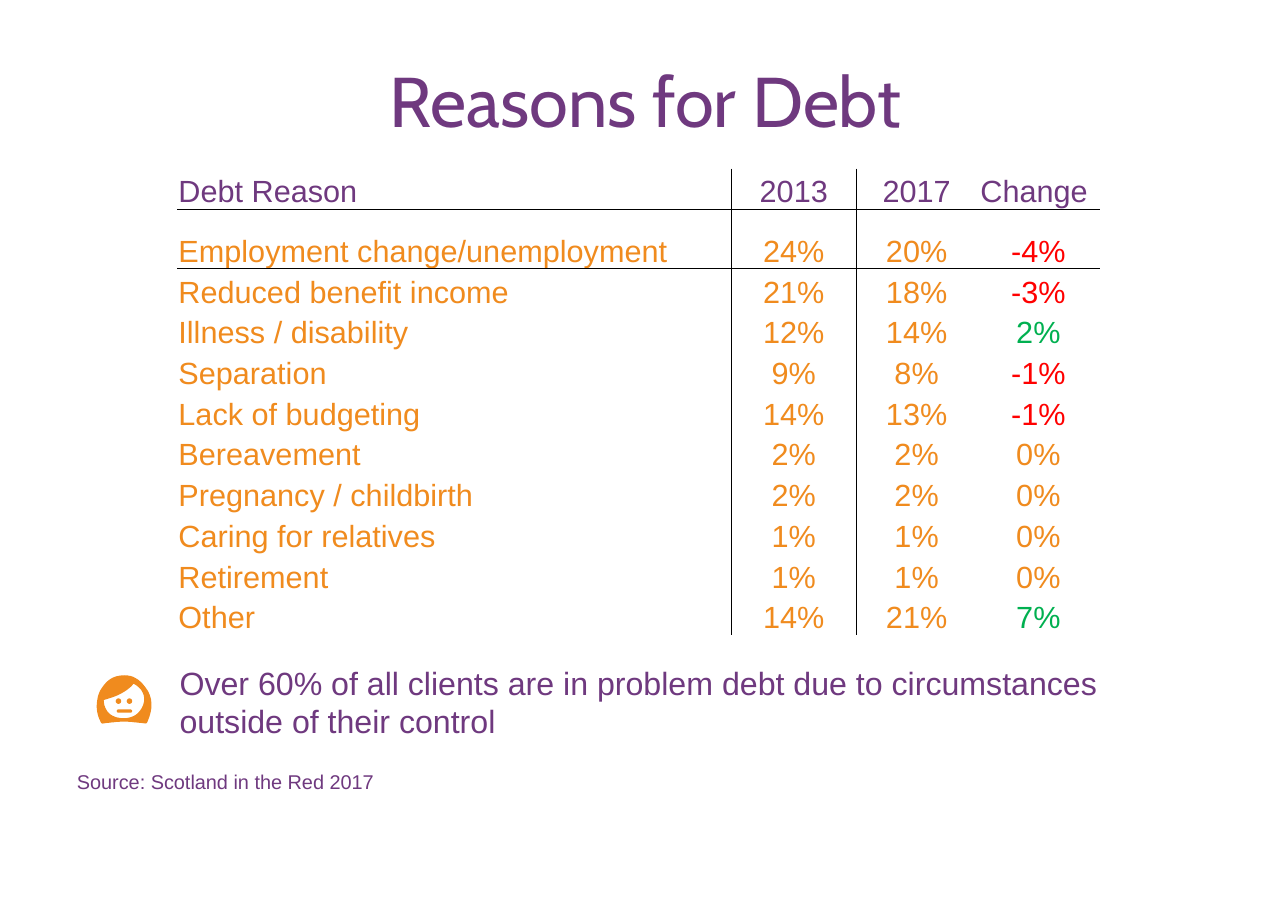
import typing

import lxml.etree
import pptx
import pptx.dml.color
import pptx.enum.shapes
import pptx.enum.text
import pptx.oxml.ns
import pptx.util

Inches = pptx.util.Inches
Align = pptx.enum.text.PP_ALIGN
Anchor = pptx.enum.text.MSO_ANCHOR
AutoSize = pptx.enum.text.MSO_AUTO_SIZE
Shape = pptx.enum.shapes.MSO_SHAPE

PURPLE, ORANGE, RED, GREEN, BLACK = "6F397F", "F08B1E", "FF0000", "00B050", "000000"
NO_STYLE = "{2D5ABB26-0587-4C30-8999-92F81FD0307C}"


class Reason(typing.NamedTuple):
    name: str
    y2013: int
    y2017: int


class Note(typing.NamedTuple):
    text: str
    size: float
    box: tuple[float, float, float, float]
    insets: tuple[float, float, float, float]


class Feature(typing.NamedTuple):
    kind: Shape
    box: tuple[float, float, float, float]


REASONS = [
    Reason("Employment change/unemployment", 24, 20),
    Reason("Reduced benefit income", 21, 18),
    Reason("Illness / disability", 12, 14),
    Reason("Separation", 9, 8),
    Reason("Lack of budgeting", 14, 13),
    Reason("Bereavement", 2, 2),
    Reason("Pregnancy / childbirth", 2, 2),
    Reason("Caring for relatives", 1, 1),
    Reason("Retirement", 1, 1),
    Reason("Other", 14, 21),
]
NOTES = [
    Note("Source: Scotland in the Red 2017", 13,
         (0.6, 6.94, 4.17, 0.32), (0.1, 0.05, 0.1, 0.05)),
    Note("Over 60% of all clients are in problem debt due to circumstances "
         "outside of their control", 21,
         (1.52, 5.96, 9.57, 0.82), (0.11, 0.06, 0.11, 0.06)),
]
FEATURES = [
    Feature(Shape.OVAL, (1.05, 6.34, 0.05, 0.05)),
    Feature(Shape.OVAL, (1.15, 6.34, 0.05, 0.05)),
    Feature(Shape.ROUNDED_RECTANGLE, (1.06, 6.44, 0.14, 0.03)),
]
# Bezier contours in thousandths of an inch: start, then two controls and an end per curve
HAIR = [(1321, 6240), (1270, 6170), (1210, 6130), (1130, 6130),
        (1070, 6130), (1010, 6150), (970, 6190), (930, 6230), (905, 6270), (890, 6320),
        (870, 6400), (875, 6470), (910, 6545), (917, 6565), (925, 6570), (940, 6567),
        (1000, 6560), (1060, 6552), (1128, 6550), (1190, 6552), (1250, 6560), (1315, 6567),
        (1330, 6570), (1336, 6562), (1342, 6545), (1390, 6430), (1390, 6330), (1321, 6240)]
FACE = [(1128, 6520), (1080, 6520), (1030, 6510), (990, 6475),
        (960, 6445), (942, 6400), (942, 6355), (960, 6350), (975, 6345), (990, 6340),
        (1050, 6325), (1120, 6290), (1170, 6250), (1190, 6235), (1200, 6222), (1212, 6206),
        (1290, 6245), (1330, 6320), (1300, 6400), (1270, 6480), (1205, 6520), (1128, 6520)]


def rgb(color: str) -> pptx.dml.color.RGBColor:
    return pptx.dml.color.RGBColor.from_string(color)


def add_run(p, text: str, size: float, color: str, font: str = "Arial") -> None:
    r = p.add_run()
    r.text = text
    r.font.name, r.font.size = font, pptx.util.Pt(size)
    r.font.color.rgb = rgb(color)


def set_insets(tf, insets: tuple[float, float, float, float]) -> None:
    tf.margin_left, tf.margin_top, tf.margin_right, tf.margin_bottom = map(Inches, insets)


def add_note(s, note: Note) -> None:
    tf = s.shapes.add_textbox(*map(Inches, note.box)).text_frame
    tf.word_wrap = True
    tf.auto_size = AutoSize.SHAPE_TO_FIT_TEXT
    set_insets(tf, note.insets)
    add_run(tf.paragraphs[0], note.text, note.size, PURPLE)


def set_borders(cell, sides: str) -> None:
    tcPr = cell._tc.get_or_add_tcPr()
    for i, side in enumerate(sides):
        ln = lxml.etree.Element(pptx.oxml.ns.qn(f"a:ln{side}"), w=str(pptx.util.Pt(0.5)))
        fill = lxml.etree.SubElement(ln, pptx.oxml.ns.qn("a:solidFill"))
        lxml.etree.SubElement(fill, pptx.oxml.ns.qn("a:srgbClr"), val=BLACK)
        tcPr.insert(i, ln)


def fill_cell(table, row: int, col: int, text: str, color: str) -> None:
    cell = table.cell(row, col)
    cell.vertical_anchor = Anchor.BOTTOM
    set_insets(cell, (0.01, 0.01, 0.01, 0))
    cell.fill.background()
    p = cell.text_frame.paragraphs[0]
    p.alignment = Align.CENTER if col else Align.LEFT
    add_run(p, text, 20, color)
    set_borders(cell, {0: "R", 1: "L"}.get(col, "") + {0: "B", 1: "T"}.get(row, ""))


def add_reasons(s, reasons: list[Reason]) -> None:
    widths = (5.03, 1.13, 1.1, 1.11)
    table = s.shapes.add_table(len(reasons) + 1, len(widths), Inches(1.61), Inches(1.53),
                               Inches(sum(widths)), Inches(4.24)).table
    table.first_row = table.horz_banding = False
    table._tbl.tblPr.find(pptx.oxml.ns.qn("a:tableStyleId")).text = NO_STYLE
    for column, width in zip(table.columns, widths):
        column.width = Inches(width)
    for i, row in enumerate(table.rows):
        row.height = Inches(0.54 if i == 1 else 0.37)
    for col, text in enumerate(("Debt Reason", "2013", "2017", "Change ")):
        fill_cell(table, 0, col, text, PURPLE)
    for row, reason in enumerate(reasons, 1):
        change = reason.y2017 - reason.y2013
        change_color = RED if change < 0 else GREEN if change else ORANGE
        fill_cell(table, row, 0, reason.name, ORANGE)
        for col, value in enumerate((reason.y2013, reason.y2017, change), 1):
            fill_cell(table, row, col, f"{value}%", change_color if col == 3 else ORANGE)


def curve_points(contour: list[tuple[int, int]], steps: int = 8) -> list[tuple[float, float]]:
    points = []
    for i in range(0, len(contour) - 1, 3):
        curve = contour[i:i + 4]
        for t in (n / steps for n in range(1, steps + 1)):
            weights = ((1 - t) ** 3, 3 * t * (1 - t) ** 2, 3 * t * t * (1 - t), t ** 3)
            points.append(tuple(sum(w * pt[axis] for w, pt in zip(weights, curve))
                                for axis in (0, 1)))
    return points


def paint(shape, color: str) -> None:
    shape.shadow.inherit = False
    shape.fill.solid()
    shape.fill.fore_color.rgb = rgb(color)
    shape.line.fill.background()


def add_face_icon(s) -> None:
    group = s.shapes.add_group_shape()
    builder = group.shapes.build_freeform(*HAIR[0], scale=Inches(1) / 1000)
    builder.add_line_segments(curve_points(HAIR), close=True)
    builder.move_to(*FACE[0])
    builder.add_line_segments(curve_points(FACE), close=True)
    paint(builder.convert_to_shape(), ORANGE)
    for feature in FEATURES:
        sp = group.shapes.add_shape(feature.kind, *map(Inches, feature.box))
        if feature.kind == Shape.ROUNDED_RECTANGLE:
            sp.adjustments[0] = 0.5
        paint(sp, ORANGE)


def main() -> None:
    prs = pptx.Presentation()
    prs.slide_width, prs.slide_height = Inches(11.69), Inches(8.27)
    s = prs.slides.add_slide(prs.slide_layouts[5])

    # Title
    title = s.shapes.title
    title.left, title.top, title.width, title.height = map(Inches, (0.41, 0.4, 10.82, 0.96))
    tf = title.text_frame
    tf.word_wrap, tf.auto_size = True, AutoSize.NONE
    tf.vertical_anchor = Anchor.TOP
    set_insets(tf, (0.28, 0.12, 0.2, 0.2))
    tf.paragraphs[0].alignment = Align.CENTER
    add_run(tf.paragraphs[0], "Reasons for Debt", 46, PURPLE, "Cabin")

    # Table, notes and icon
    add_reasons(s, REASONS)
    for note in NOTES:
        add_note(s, note)
    add_face_icon(s)
    prs.save("out.pptx")


if __name__ == "__main__":
    main()
